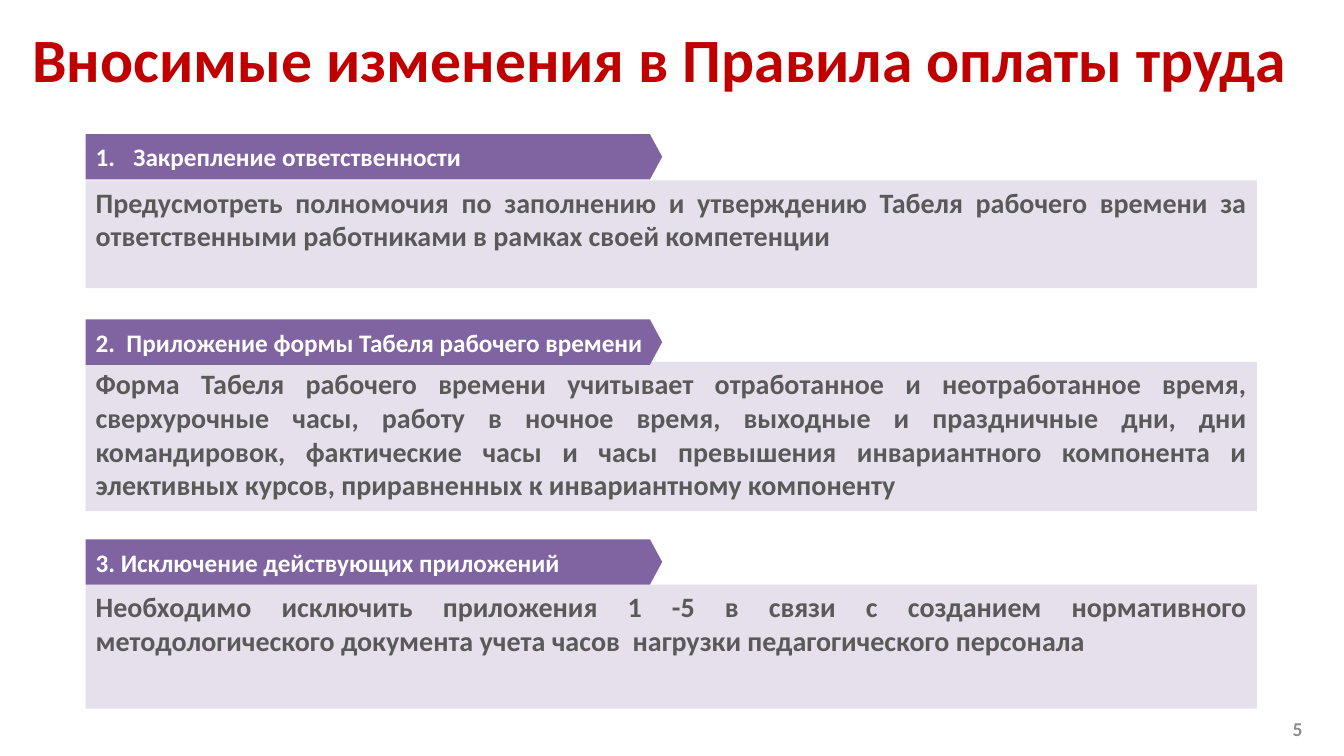
from lxml.etree import SubElement
from pptx import Presentation
from pptx.dml.color import RGBColor as RGB
from pptx.enum.shapes import MSO_SHAPE as Shape
from pptx.enum.text import MSO_ANCHOR as Anchor, PP_ALIGN as Align
from pptx.oxml.ns import qn
from pptx.util import Pt

RED = RGB(0xC0, 0x00, 0x00)
PURPLE = RGB(0x80, 0x64, 0xA2)
PALE = RGB(0xE6, 0xE0, 0xEC)
DARK = RGB(0x59, 0x59, 0x59)
GRAY = RGB(0x8C, 0x8C, 0x8C)
WHITE = RGB(0xFF, 0xFF, 0xFF)

LEFT, WIDE, TAB, HIGH = Pt(61.2), Pt(836.6), Pt(411.8), Pt(32.4)


def write(box, text, size, color, align, anchor):
    frame = box.text_frame
    frame.word_wrap = True
    frame.vertical_anchor = anchor
    frame.text = text
    par = frame.paragraphs[0]
    par.alignment = align
    font = par.runs[0].font
    font.name = "Calibri"
    font.size = Pt(size)
    font.bold = True
    font.color.rgb = color
    return par


def block(kind, top, width, height, color):
    box = slide.shapes.add_shape(kind, LEFT, Pt(top), width, height)
    box.shadow.inherit = False
    box.fill.solid()
    box.fill.fore_color.rgb = color
    box.line.fill.background()
    return box


deck = Presentation()
deck.slide_width, deck.slide_height = Pt(960), Pt(540)
slide = deck.slides.add_slide(deck.slide_layouts[6])

title = slide.shapes.add_textbox(Pt(5.8), Pt(17.3), Pt(931.7), Pt(47.5))
write(title, "Вносимые изменения в Правила оплаты труда", 44, RED, Align.CENTER, Anchor.MIDDLE)

items = [
    (95.8, "Закрепление ответственности", True, 128.9, 77,
     "Предусмотреть полномочия по заполнению и утверждению Табеля рабочего времени "
     "за ответственными работниками в рамках своей компетенции"),
    (228.2, "2.  Приложение формы Табеля рабочего времени", False, 258.5, 106.6,
     "Форма Табеля рабочего времени учитывает отработанное и неотработанное время, "
     "сверхурочные часы, работу в ночное время, выходные и праздничные дни, дни "
     "командировок, фактические часы и часы превышения инвариантного компонента и "
     "элективных курсов, приравненных к инвариантному компоненту"),
    (385.2, "3. Исключение действующих приложений", False, 417.6, 88.6,
     "Необходимо исключить приложения 1 -5 в связи с созданием нормативного "
     "методологического документа учета часов  нагрузки педагогического персонала"),
]

for top, head, auto, low, tall, body in items:
    panel = block(Shape.RECTANGLE, low, WIDE, Pt(tall), PALE)
    write(panel, body, 20, DARK, Align.JUSTIFY, Anchor.TOP)
    label = block(Shape.PENTAGON, top, TAB, HIGH, PURPLE)
    label.adjustments[0] = 0.27
    par = write(label, head, 18, WHITE, Align.LEFT, Anchor.MIDDLE)
    if auto:
        props = par._p.get_or_add_pPr()
        props.set("marL", str(Pt(27)))
        props.set("indent", str(-Pt(27)))
        SubElement(props, qn("a:buFont"), typeface="+mj-lt")
        SubElement(props, qn("a:buAutoNum"), type="arabicPeriod")

number = slide.shapes.add_textbox(Pt(834.5), Pt(506.2), Pt(103), Pt(28.8))
write(number, "5", 14, GRAY, Align.RIGHT, Anchor.MIDDLE)

deck.save("out.pptx")
